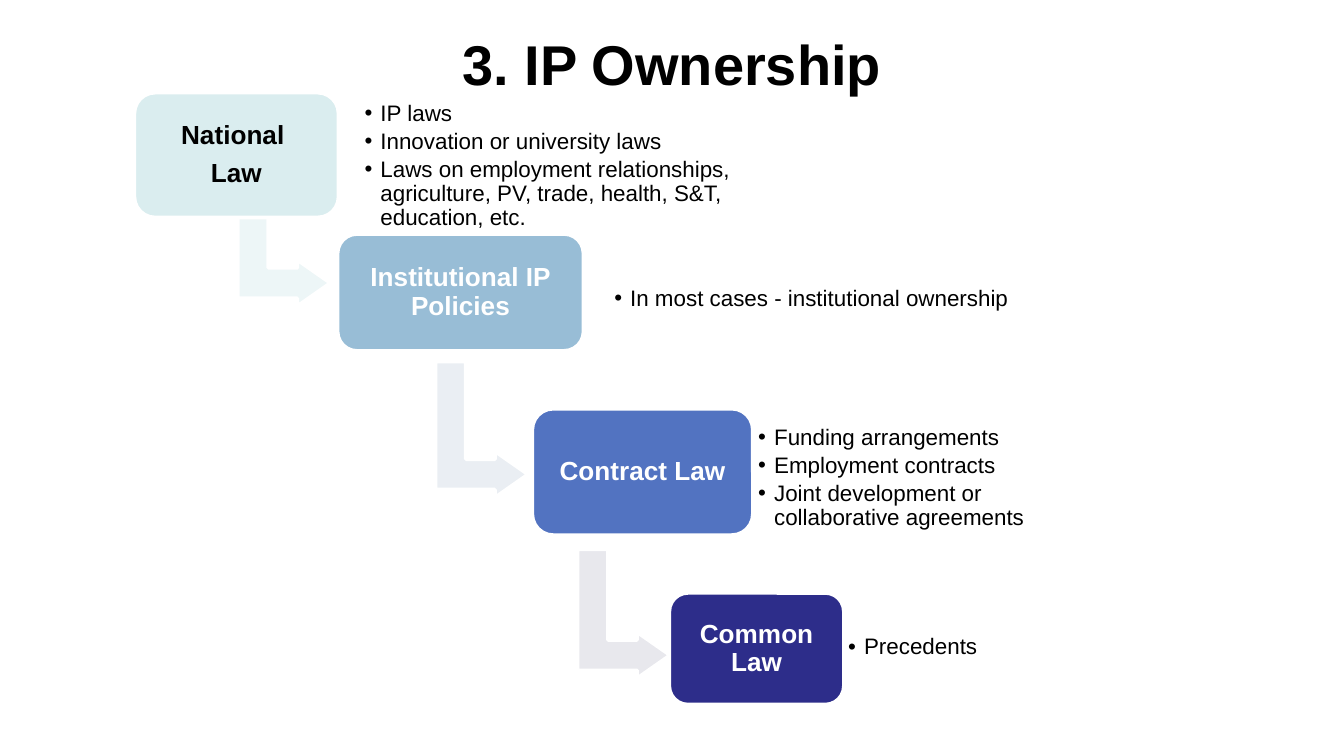
"""Build the IP ownership slide: four descending steps of legal sources."""
from typing import NamedTuple

from lxml import etree
from pptx import Presentation
from pptx import util as u
from pptx.dml.color import RGBColor
from pptx.enum import shapes, text
from pptx.oxml import ns

FONT = "Arial"
COLORS = {
    "black": "000000",
    "white": "FFFFFF",
    "national": "DAEDEF",
    "institution": "98BDD6",
    "contract": "5273C1",
    "common": "2D2D8A",
    "national_arrow": "EDF6F7",
    "institution_arrow": "EAEEF3",
    "contract_arrow": "E8E8ED",
}


class Area(NamedTuple):
    left: float
    top: float
    width: float
    height: float


class Step(NamedTuple):
    name: str
    ink: str
    label: str
    box: Area
    points: list[str]
    list_area: Area
    arrow: Area | None = None


STEPS = [
    Step("national", "black", "National \nLaw", Area(2.54, 1.75, 3.86, 2.36),
         ["IP laws", "Innovation or university laws",
          "Laws on employment relationships, agriculture, PV, trade, health, S&T, education, etc."],
         Area(6.76, 1.75, 8.66, 2.79), Area(4.24, 3.78, 2.26, 1.75)),
    Step("institution", "white", "Institutional IP Policies", Area(6.38, 4.42, 4.65, 2.21),
         ["In most cases - institutional ownership"],
         Area(11.48, 4.93, 8.18, 1.45), Area(7.82, 7.24, 2.57, 1.75)),
    Step("contract", "white", "Contract Law", Area(10.06, 7.72, 4.17, 2.39),
         ["Funding arrangements", "Employment contracts",
          "Joint development or collaborative agreements"],
         Area(14.2, 8.31, 6.71, 1.45), Area(10.57, 10.72, 2.44, 1.75)),
    Step("common", "white", "Common Law", Area(12.65, 11.2, 3.3, 2.11),
         ["Precedents"], Area(15.9, 11.51, 5.69, 1.45)),
]


def color(name: str) -> RGBColor:
    return RGBColor.from_string(COLORS[name])


def place(shape, area: Area) -> None:
    shape.left, shape.top, shape.width, shape.height = (u.Cm(side) for side in area)


def set_frame(frame, margin: float) -> None:
    frame.word_wrap = True
    frame.auto_size = text.MSO_AUTO_SIZE.NONE
    frame.vertical_anchor = text.MSO_ANCHOR.MIDDLE
    frame.margin_left = frame.margin_right = u.Cm(margin)
    frame.margin_top = frame.margin_bottom = u.Cm(margin)


def format_para(para, size: float, ink: str, bold: bool, after: float, align) -> None:
    para.alignment = align
    para.line_spacing = 0.9
    para.space_before = u.Pt(0)
    para.space_after = u.Pt(after)
    for span in para.runs:
        span.font.name = FONT
        span.font.size = u.Pt(size)
        span.font.bold = bold
        span.font.color.rgb = color(ink)


def add_bullet(para) -> None:
    properties = para._p.get_or_add_pPr()
    properties.set("marL", str(u.Cm(0.3)))
    properties.set("indent", str(-u.Cm(0.3)))
    etree.SubElement(properties, ns.qn("a:buChar")).set("char", "•")


def add_block(page, kind, area: Area, fill: str):
    shape = page.shapes.add_shape(kind, *(u.Cm(side) for side in area))
    shape.shadow.inherit = False
    shape.fill.solid()
    shape.fill.fore_color.rgb = color(fill)
    shape.line.color.rgb = color("white")
    shape.line.width = u.Pt(2)
    return shape


def draw_arrow(page, step: Step) -> None:
    arrow = add_block(page, shapes.MSO_SHAPE.BENT_UP_ARROW, step.arrow, f"{step.name}_arrow")
    arrow.rotation = 90
    for index, ratio in enumerate((0.328, 0.25, 0.358)):
        arrow.adjustments[index] = ratio


def draw_box(page, step: Step) -> None:
    box = add_block(page, shapes.MSO_SHAPE.ROUNDED_RECTANGLE, step.box, step.name)
    set_frame(box.text_frame, 0.15)
    box.text_frame.text = step.label
    for para in box.text_frame.paragraphs:
        format_para(para, 14, step.ink, True, 5.6, text.PP_ALIGN.CENTER)


def fill_list(holder, step: Step) -> None:
    place(holder, step.list_area)
    set_frame(holder.text_frame, 0.13)
    holder.text_frame.text = "\n".join(step.points)
    for para in holder.text_frame.paragraphs:
        add_bullet(para)
        format_para(para, 12, "black", False, 2, text.PP_ALIGN.LEFT)


def fill_title(title) -> None:
    place(title, Area(0, 0, 25.4, 2.39))
    set_frame(title.text_frame, 0.13)
    title.text_frame.text = "3. IP Ownership"
    format_para(title.text_frame.paragraphs[0], 30, "black", True, 0, text.PP_ALIGN.CENTER)
    title.text_frame.paragraphs[0].line_spacing = 1.0


def main() -> None:
    deck = Presentation()
    deck.slide_width, deck.slide_height = u.Cm(25.4), u.Cm(14.28)
    page = deck.slides.add_slide(deck.slide_layouts.get_by_name("Comparison"))
    fill_title(page.shapes.title)
    holders = [holder for holder in page.placeholders if holder.placeholder_format.idx > 0]
    for step, holder in zip(STEPS, holders):
        if step.arrow:
            draw_arrow(page, step)
        draw_box(page, step)
        fill_list(holder, step)
    deck.save("out.pptx")


if __name__ == "__main__":
    main()
